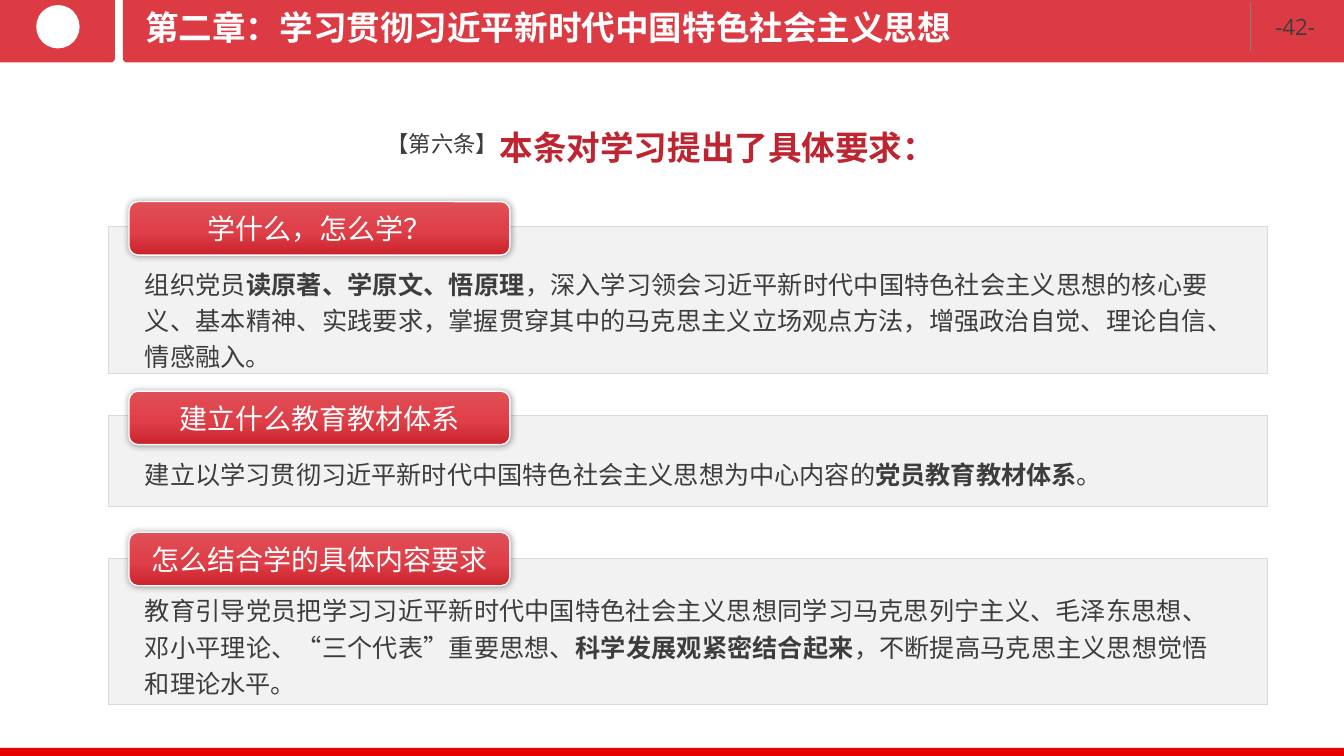
from copy import deepcopy
from math import cos, radians, sin

from lxml import etree
from pptx import Presentation
from pptx.dml.color import RGBColor
from pptx.enum.shapes import MSO_CONNECTOR, MSO_SHAPE
from pptx.enum.text import MSO_ANCHOR, MSO_AUTO_SIZE, PP_ALIGN
from pptx.oxml.ns import qn
from pptx.util import Pt

LEFT, CENTER, JUSTIFY = PP_ALIGN.LEFT, PP_ALIGN.CENTER, PP_ALIGN.JUSTIFY
RECT, ROUNDED, OVAL = MSO_SHAPE.RECTANGLE, MSO_SHAPE.ROUNDED_RECTANGLE, MSO_SHAPE.OVAL
MIDDLE, NO_AUTOFIT = MSO_ANCHOR.MIDDLE, MSO_AUTO_SIZE.NONE
STRAIGHT = MSO_CONNECTOR.STRAIGHT
CJK_FONT = "Noto Sans CJK SC"
RED, WHITE, DARK = "DD3B44", "FFFFFF", "3D3D3D"
SLIDE_W, SLIDE_H = 960.48, 540


def rgb(color):
    return RGBColor.from_string(color)


def write(frame, runs, size, color, font=CJK_FONT, align=LEFT, spaced=False):
    """Fill the first paragraph with (text, bold) runs; spaced sets 1.2 lines."""
    paragraph = frame.paragraphs[0]
    paragraph.alignment = align
    if spaced:
        paragraph.line_spacing = 1.2
        paragraph.space_after = Pt(4)
    for text, bold in runs:
        run = paragraph.add_run()
        run.text = text
        run.font.size = Pt(size)
        run.font.bold = bold
        run.font.color.rgb = rgb(color)
        run.font.name = font
        etree.SubElement(run.font._element, qn("a:ea"), typeface=CJK_FONT)


prs = Presentation()
prs.slide_width, prs.slide_height = Pt(SLIDE_W), Pt(SLIDE_H)
slide = prs.slides.add_slide(prs.slide_layouts[5])
shapes = slide.shapes

# Header blocks, rounded on the edges that face each other
HEADER_TOP, HEADER_BOTTOM, RADIUS = -2, 44.6, 3
for outer, inner, side in [(0, 82.2, 1), (SLIDE_W, 87.8, -1)]:
    outline = [(outer, HEADER_TOP)]
    for middle, angles in [(HEADER_TOP + RADIUS, range(-90, 1, 15)),
                           (HEADER_BOTTOM - RADIUS, range(0, 91, 15))]:
        for angle in angles:
            outline.append((inner - side * RADIUS * (1 - cos(radians(angle))),
                            middle + RADIUS * sin(radians(angle))))
    outline.append((outer, HEADER_BOTTOM))
    corners = [(Pt(x), Pt(y)) for x, y in outline]
    builder = shapes.build_freeform(*corners[0])
    builder.add_line_segments(corners[1:])
    header = builder.convert_to_shape()
    header.shadow.inherit = False
    header.fill.solid()
    header.fill.fore_color.rgb = rgb(RED)
    header.line.fill.background()

# Emblem placeholder and footer bar
for kind, box, color in [(OVAL, (25.9, 3.6, 31, 31), WHITE),
                         (RECT, (0, 534.2, SLIDE_W, 5.8), "E60000")]:
    ornament = shapes.add_shape(kind, *map(Pt, box))
    ornament.shadow.inherit = False
    ornament.fill.solid()
    ornament.fill.fore_color.rgb = rgb(color)
    ornament.line.fill.background()

divider = shapes.add_connector(STRAIGHT, Pt(893.5), Pt(1.4), Pt(893.5), Pt(37.4))
divider.line.color.rgb = rgb("7F7F7F")
divider.line.width = Pt(0.75)
etree.SubElement(divider._element.spPr, qn("a:effectLst"))

title = shapes.title
title.left, title.top, title.width, title.height = map(Pt, (96.5, -0.7, 649.4, 39.6))
title.text_frame.auto_size = NO_AUTOFIT
title.text_frame.word_wrap = True
title.text_frame.vertical_anchor = MIDDLE
write(title.text_frame, [("第二章：学习贯彻习近平新时代中国特色社会主义思想", True)],
      24, WHITE, "Arial")
title._element.getparent().append(title._element)  # in front of the header

page_number = shapes.add_textbox(*map(Pt, (904.3, 5.8, 46.1, 26.6)))
page_number.text_frame.word_wrap = False
write(page_number.text_frame, [("-42-", False)], 16, DARK, "Open Sans")

article = shapes.add_textbox(*map(Pt, (268.6, 89.3, 95, 26.6)))
article.text_frame.word_wrap = False
write(article.text_frame, [("【第六条】", False)], 16, DARK, align=CENTER)

heading = shapes.add_textbox(*map(Pt, (349.9, 81.4, 352.8, 38.9)))
heading.text_frame.word_wrap = True
write(heading.text_frame, [("本条对学习提出了具体要求：", True)], 24, "BD2531", spaced=True)

# Panel top and height, label top, body top and height, label, body runs
sections = [
    (162, 105.1, 144, 184.3, 83.5, "学什么，怎么学？", [
        ("组织党员", False),
        ("读原著、学原文、悟原理", True),
        ("，深入学习领会习近平新时代中国特色社会主义思想的核心要义、基本精神、实践要求，"
         "掌握贯穿其中的马克思主义立场观点方法，增强政治自觉、理论自信、情感融入。", False)]),
    (296.6, 65.5, 279.4, 320.4, 31, "建立什么教育教材体系", [
        ("建立以学习贯彻习近平新时代中国特色社会主义思想为中心内容的", False),
        ("党员教育教材体系", True),
        ("。", False)]),
    (398.9, 104.4, 380.2, 417.6, 83.5, "怎么结合学的具体内容要求", [
        ("教育引导党员把学习习近平新时代中国特色社会主义思想同学习马克思列宁主义、"
         "毛泽东思想、邓小平理论、“三个代表”重要思想、", False),
        ("科学发展观紧密结合起来", True),
        ("，不断提高马克思主义思想觉悟和理论水平。", False)]),
]
LABEL_GRADIENT = [(0, "E04F57"), (0.56, "DE3F48"), (1, "CB232C")]

for panel_top, panel_height, label_top, body_top, body_height, label_text, body_runs in sections:
    panel = shapes.add_shape(RECT, Pt(77.8), Pt(panel_top), Pt(828), Pt(panel_height))
    panel.shadow.inherit = False
    panel.fill.solid()
    panel.fill.fore_color.rgb = rgb("F2F2F2")
    panel.line.color.rgb = rgb("D9D9D9")
    panel.line.width = Pt(0.75)

    label = shapes.add_shape(ROUNDED, Pt(92.2), Pt(label_top), Pt(272.2), Pt(38.2))
    label.line.color.rgb = rgb(WHITE)
    label.line.width = Pt(1)
    label.fill.gradient()
    label.fill.gradient_angle = 270
    stop_list = label._element.spPr.find(".//" + qn("a:gsLst"))
    stop_list.append(deepcopy(stop_list[0]))
    for stop, (position, color) in zip(label.fill.gradient_stops, LABEL_GRADIENT):
        stop.position = position
        stop.color.rgb = rgb(color)
    label.shadow.inherit = False
    effects = label._element.spPr.find(qn("a:effectLst"))
    glow = etree.SubElement(effects, qn("a:outerShdw"), blurRad=str(Pt(5)), dist="0",
                            dir="0", algn="ctr", rotWithShape="0")
    black = etree.SubElement(glow, qn("a:srgbClr"), val="000000")
    etree.SubElement(black, qn("a:alpha"), val="40000")
    frame = label.text_frame
    frame.margin_left = frame.margin_right = frame.margin_top = frame.margin_bottom = 0
    frame.vertical_anchor = MIDDLE
    write(frame, [(label_text, False)], 20, WHITE, align=CENTER)

    body = shapes.add_textbox(Pt(96.5), Pt(body_top), Pt(774), Pt(body_height))
    body.text_frame.word_wrap = True
    write(body.text_frame, body_runs, 18, DARK, align=JUSTIFY, spaced=True)

prs.save("out.pptx")
